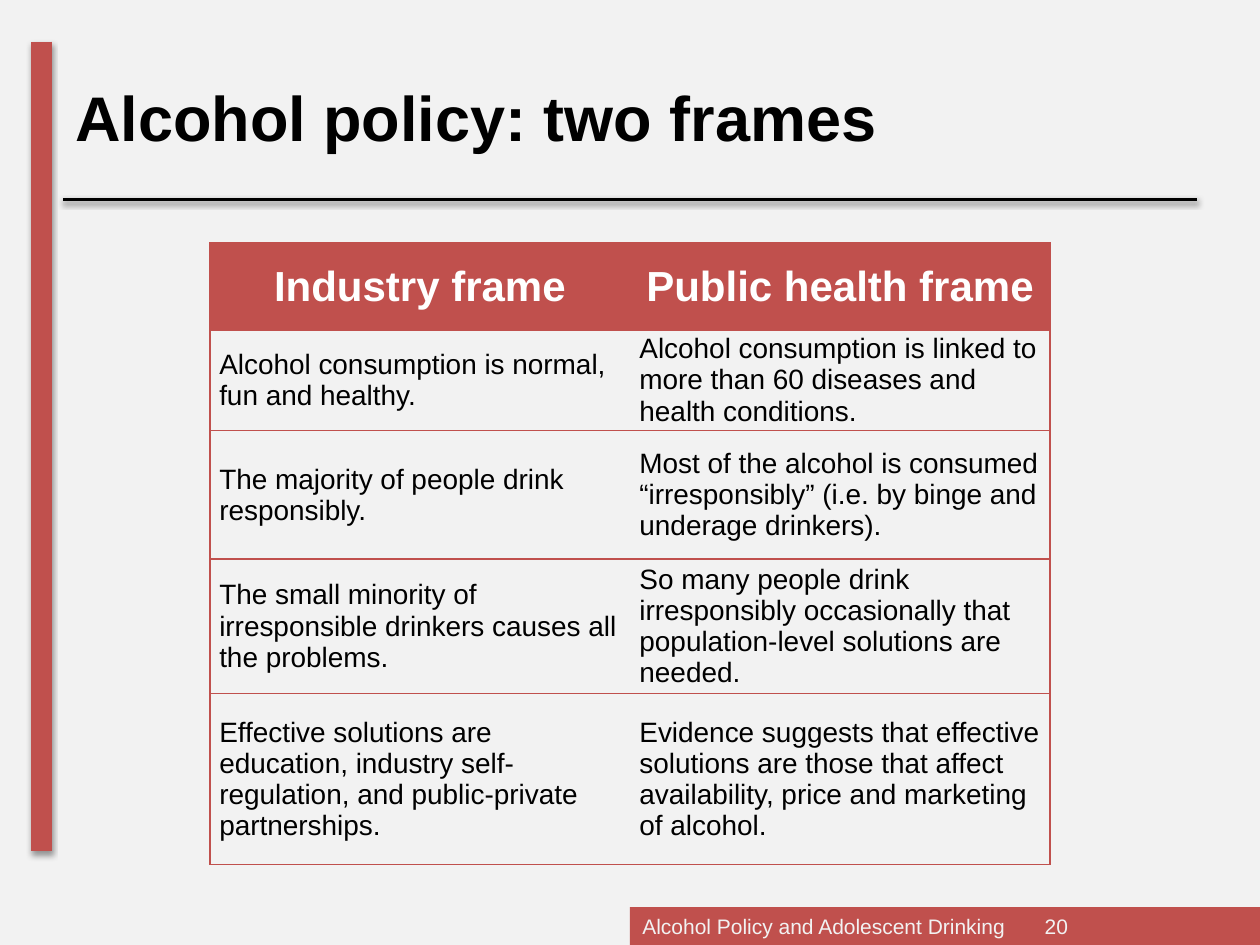
from dataclasses import dataclass

from lxml.etree import SubElement as Sub
from pptx import Presentation
from pptx.dml.color import RGBColor as RGB
from pptx.enum.shapes import MSO_CONNECTOR as Link, MSO_SHAPE as Form
from pptx.enum.text import MSO_ANCHOR as Anchor, PP_ALIGN as Align
from pptx.oxml.ns import qn
from pptx.util import Cm, Pt

COLORS = {"red": "C0504D", "pale": "F2F2F2", "black": "000000", "white": "FFFFFF"}
FONT = "Arial"


@dataclass
class Style:
    size: float
    color: str
    bold: bool = False
    align: Align = Align.LEFT


@dataclass
class Rule:
    start: tuple[float, float]
    end: tuple[float, float]
    color: str
    width: float


@dataclass
class Row:
    height: float
    cells: tuple[str, str]


HEAD = Style(24, "white", True, Align.CENTER)
BODY = Style(16, "black")
RULES = [
    Rule((0.84, 0.84), (0.84, 17.15), "red", 12),
    Rule((1.27, 4.02), (24.13, 4.02), "black", 2),
]
ROWS = [
    Row(1.75, ("Industry frame", "Public health frame")),
    Row(1.75, ("Alcohol consumption is normal, fun and healthy.",
               "Alcohol consumption is linked to more than 60 diseases and "
               "health conditions.")),
    Row(2.59, ("The majority of people drink responsibly.",
               "Most of the alcohol is consumed “irresponsibly” (i.e. by binge "
               "and underage drinkers).")),
    Row(2.59, ("The small minority of irresponsible drinkers causes all the problems.",
               "So many people drink irresponsibly occasionally that "
               "population-level solutions are needed.")),
    Row(3.45, ("Effective solutions are education, industry self-regulation, "
               "and public-private partnerships.",
               "Evidence suggests that effective solutions are those that affect "
               "availability, price and marketing of alcohol.")),
]


def tint(name: str) -> RGB:
    return RGB.from_string(COLORS[name])


def paint(fill, name: str) -> None:
    fill.solid()
    fill.fore_color.rgb = tint(name)


def write(frame, text: str, style: Style) -> None:
    frame.word_wrap = True
    para = frame.paragraphs[0]
    para.alignment = style.align
    run = para.add_run()
    run.text = text
    run.font.name = FONT
    run.font.size = Pt(style.size)
    run.font.bold = style.bold
    run.font.color.rgb = tint(style.color)


def draw_rule(slide, rule: Rule) -> None:
    """Draw a straight line with a soft shadow below it."""
    ends = [Cm(n) for n in rule.start + rule.end]
    line = slide.shapes.add_connector(Link.STRAIGHT, *ends)
    line.line.color.rgb = tint(rule.color)
    line.line.width = Pt(rule.width)
    glow = Sub(Sub(line._element.spPr, qn("a:effectLst")), qn("a:outerShdw"),
               blurRad=str(Pt(3.1)), dist=str(Pt(1.6)), dir="5400000", rotWithShape="0")
    shade = Sub(glow, qn("a:srgbClr"), val=COLORS["black"])
    Sub(shade, qn("a:alpha"), val="38000")


def edge(cell, sides: str) -> None:
    """Give the cell a red line on the named sides and none on the rest."""
    props = cell._tc.get_or_add_tcPr()
    for side in "LRTB":
        line = Sub(props, qn(f"a:ln{side}"), w=str(Pt(1)))
        if side in sides:
            Sub(Sub(line, qn("a:solidFill")), qn("a:srgbClr"), val=COLORS["red"])
        else:
            Sub(line, qn("a:noFill"))


def draw_table(slide, rows: list[Row]) -> None:
    high = sum(row.height for row in rows)
    table = slide.shapes.add_table(
        len(rows), 2, Cm(4.23), Cm(4.9), Cm(16.94), Cm(high)).table
    table.horz_banding = False
    for i, row in enumerate(rows):
        table.rows[i].height = Cm(row.height)
        for j, text in enumerate(row.cells):
            cell = table.cell(i, j)
            cell.vertical_anchor = Anchor.MIDDLE
            cell.margin_left = cell.margin_right = Cm(0.19)
            cell.margin_top = cell.margin_bottom = 0
            edge(cell, ("LTB", "TRB")[j])
            paint(cell.fill, "pale" if i else "red")
            write(cell.text_frame, text, BODY if i else HEAD)


def draw_foot(slide) -> None:
    """Draw the footer bar, with the page number at a tab stop."""
    bar = slide.shapes.add_shape(Form.RECTANGLE, Cm(12.7), Cm(18.29), Cm(12.7), Cm(0.76))
    bar.shadow.inherit = False
    paint(bar.fill, "red")
    bar.line.fill.background()
    frame = bar.text_frame
    frame.vertical_anchor = Anchor.MIDDLE
    write(frame, "Alcohol Policy and Adolescent Drinking\t20", Style(12, "pale"))
    props = frame.paragraphs[0]._p.get_or_add_pPr()
    Sub(Sub(props, qn("a:tabLst")), qn("a:tab"), pos=str(Cm(8.11)), algn="l")


def draw_title(slide) -> None:
    box = slide.shapes.add_textbox(Cm(1.27), Cm(0.76), Cm(22.86), Cm(3.18))
    box.text_frame.vertical_anchor = Anchor.MIDDLE
    write(box.text_frame, "Alcohol policy: two frames", Style(36, "black", True))


def main() -> None:
    deck = Presentation()
    deck.slide_width, deck.slide_height = Cm(25.4), Cm(19.05)
    slide = deck.slides.add_slide(deck.slide_layouts[6])
    paint(slide.background.fill, "pale")
    draw_foot(slide)
    for rule in RULES:
        draw_rule(slide, rule)
    draw_title(slide)
    draw_table(slide, ROWS)
    deck.save("out.pptx")


if __name__ == "__main__":
    main()
